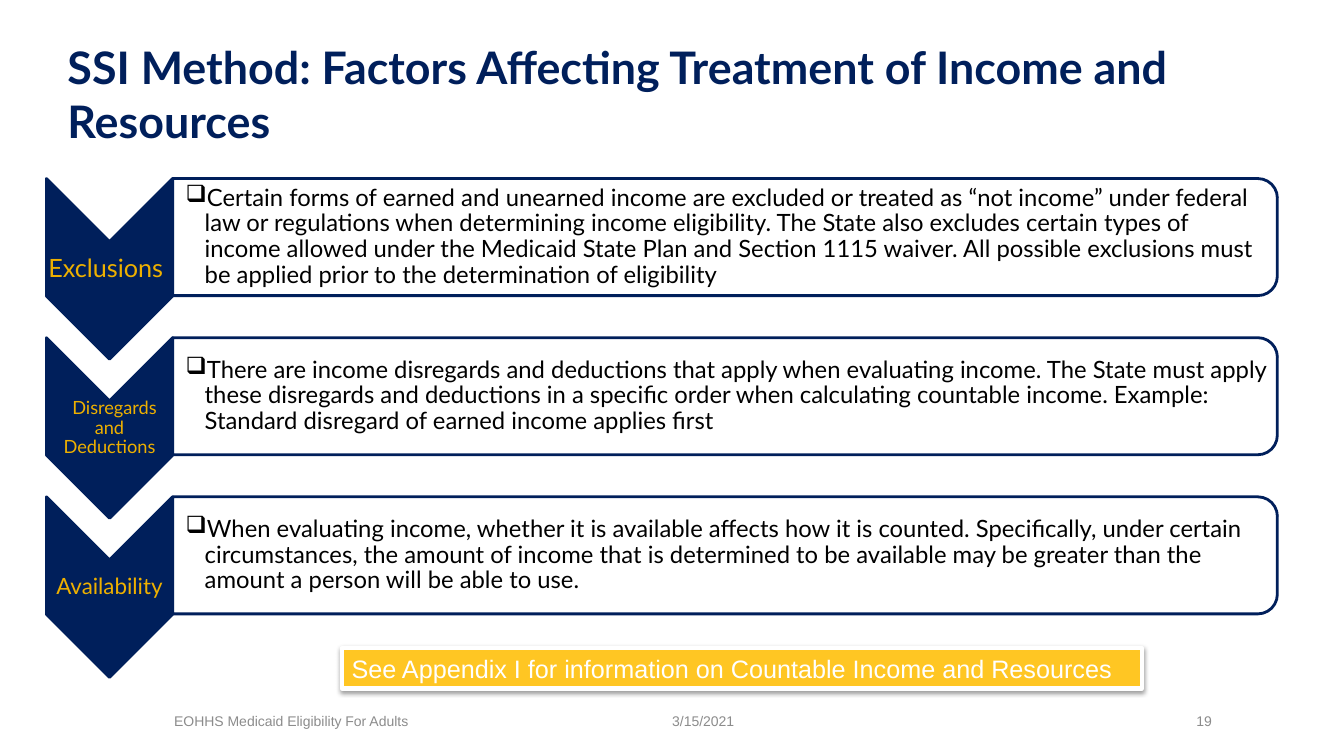
"""Build the slide on factors affecting SSI treatment of income and resources."""
from lxml import etree
from pptx import Presentation
from pptx.dml.color import RGBColor
from pptx.enum.shapes import MSO_SHAPE
from pptx.enum.text import MSO_ANCHOR, MSO_AUTO_SIZE, PP_ALIGN
from pptx.oxml.ns import qn
from pptx.util import Cm, Pt

CHEVRON, BAR, RECTANGLE = MSO_SHAPE.CHEVRON, MSO_SHAPE.ROUND_2_SAME_RECTANGLE, MSO_SHAPE.RECTANGLE
MIDDLE, TOP = MSO_ANCHOR.MIDDLE, MSO_ANCHOR.TOP
LEFT, CENTER = PP_ALIGN.LEFT, PP_ALIGN.CENTER
NO_FIT = MSO_AUTO_SIZE.NONE

COLORS = {"navy": "001F5B", "gold": "EEB000", "amber": "FFC623",
          "white": "FFFFFF", "black": "000000", "gray": "8C8C8C"}

TITLE = "SSI Method: Factors Affecting Treatment of Income and Resources"
# label, label size, first-line indent, right inset, explanation
FACTORS = [
    ("Exclusions", 18, 0, 0.22,
     "Certain forms of earned and unearned income are excluded or treated as “not income” under "
     "federal law or regulations when determining income eligibility. The State also excludes "
     "certain types of income allowed under the Medicaid State Plan and Section 1115 waiver. All "
     "possible exclusions must be applied prior to the determination of eligibility"),
    ("Disregards and Deductions", 13, 0.25, 0.03,
     "There are income disregards and deductions that apply when evaluating income. The State must "
     "apply these disregards and deductions in a specific order when calculating countable income. "
     "Example: Standard disregard of earned income applies first"),
    ("Availability", 16, 0, 0.03,
     "When evaluating income, whether it is available affects how it is counted. Specifically, "
     "under certain circumstances, the amount of income that is determined to be available may be "
     "greater than the amount a person will be able to use."),
]
BANNER = "See Appendix I for information on Countable Income and Resources"
FOOTERS = [("3/15/2021", 16.94, 7.9),
           ("EOHHS Medicaid Eligibility For Adults", 4.39, 10.72),
           ("19", 30.15, 2.03)]

FIRST_TOP, PITCH = 4.5, 4.01
CHEVRON_LEFT, CHEVRON_WIDTH, CHEVRON_HEIGHT = 1.17, 3.18, 4.55
LABEL_OFFSET, LABEL_HEIGHT = 1.6, 1.37
BAR_LEFT, BAR_WIDTH, BAR_HEIGHT = 4.35, 27.84, 2.95
TEXT_INSET, BULLET_INDENT = 0.14, 0.48


def rgb(name):
    return RGBColor.from_string(COLORS[name])


def write(shape, text, size, color, font="Arial", align=LEFT, anchor=MIDDLE,
          insets=(0, 0, 0, 0), spacing=None, margin=0, indent=0, bullet=None):
    frame = shape.text_frame
    frame.word_wrap = True
    frame.auto_size = NO_FIT
    frame.vertical_anchor = anchor
    (frame.margin_left, frame.margin_top,
     frame.margin_right, frame.margin_bottom) = (Cm(inset) for inset in insets)
    frame.text = text
    paragraph = frame.paragraphs[0]
    paragraph.alignment = align
    if spacing:
        paragraph.line_spacing = spacing
    properties = paragraph._p.get_or_add_pPr()
    properties.set("marL", str(Cm(margin)))
    properties.set("indent", str(Cm(indent)))
    if bullet:
        etree.SubElement(properties, qn("a:buChar"), char=bullet)
    paragraph.font.name = font
    paragraph.font.size = Pt(size)
    paragraph.font.color.rgb = rgb(color)
    return paragraph


def add_text(slide, box, *args, **options):
    write(slide.shapes.add_textbox(*(Cm(length) for length in box)), *args, **options)


def add_shape(slide, kind, box, fill, line, line_width):
    shape = slide.shapes.add_shape(kind, *(Cm(length) for length in box))
    shape.shadow.inherit = False
    shape.fill.solid()
    shape.fill.fore_color.rgb = rgb(fill)
    shape.line.color.rgb = rgb(line)
    shape.line.width = Pt(line_width)
    return shape


def add_turned(slide, kind, left, top, width, height, fill):
    shift = (width - height) / 2
    shape = add_shape(slide, kind, (left + shift, top - shift, height, width), fill, "navy", 2)
    shape.rotation = 90
    return shape


def set_alpha(parent, percent):
    color = parent.find(qn("a:srgbClr"))
    etree.SubElement(color, qn("a:alpha"), val=str(percent * 1000))


def add_factor(slide, top, label, size, indent, right_inset, explanation):
    add_turned(slide, CHEVRON, CHEVRON_LEFT, top, CHEVRON_WIDTH, CHEVRON_HEIGHT, "navy")
    add_text(slide, (CHEVRON_LEFT, top + LABEL_OFFSET, CHEVRON_WIDTH, LABEL_HEIGHT),
             label, size, "gold", "Lato", CENTER, spacing=0.9, indent=indent,
             insets=(0.03, 0.03, right_inset, 0.03))
    bar = add_turned(slide, BAR, BAR_LEFT, top, BAR_WIDTH, BAR_HEIGHT, "white")
    set_alpha(bar._element.spPr.find(qn("a:solidFill")), 90)
    add_text(slide, (BAR_LEFT, top + TEXT_INSET, BAR_WIDTH - TEXT_INSET, BAR_HEIGHT - 2 * TEXT_INSET),
             explanation, 17, "black", "Lato", spacing=0.9, insets=(0.33, 0.03, 0.03, 0.03),
             margin=BULLET_INDENT, indent=-BULLET_INDENT, bullet="❑")


def add_banner(slide):
    banner = add_shape(slide, RECTANGLE, (8.61, 16.33, 20.17, 1.02), "amber", "white", 3)
    effects = banner._element.spPr.find(qn("a:effectLst"))
    shadow = etree.SubElement(effects, qn("a:outerShdw"), blurRad=str(Pt(3.1)),
                              dist=str(Pt(1.6)), dir="5400000", rotWithShape="0")
    etree.SubElement(shadow, qn("a:srgbClr"), val=COLORS["black"])
    set_alpha(shadow, 38)
    write(banner, BANNER, 18, "white", anchor=TOP, insets=(0.25, 0.13, 0.25, 0.13))


def main():
    deck = Presentation()
    deck.slide_width, deck.slide_height = Cm(33.87), Cm(19.05)
    slide = deck.slides.add_slide(deck.slide_layouts[5])
    title = slide.shapes.title
    title.left, title.top, title.width, title.height = Cm(1.7), Cm(0.76), Cm(30.48), Cm(3.18)
    write(title, TITLE, 32, "navy", "Lato").font.bold = True
    for row, factor in enumerate(FACTORS):
        add_factor(slide, FIRST_TOP + row * PITCH, *factor)
    add_banner(slide)
    for text, left, width in FOOTERS:
        add_text(slide, (left, 17.65, width, 1.02), text, 10, "gray")
    deck.save("out.pptx")


if __name__ == "__main__":
    main()
